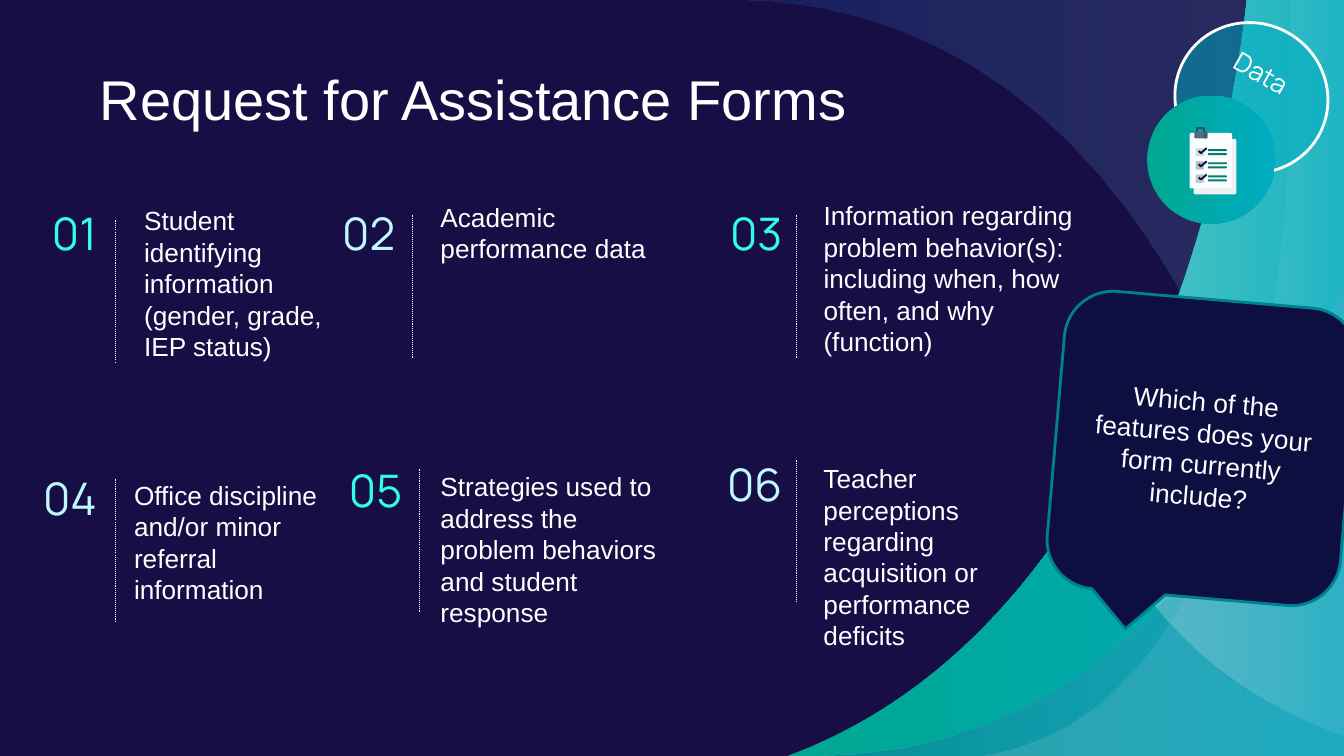
from lxml import etree
from pptx import Presentation
from pptx.dml.color import RGBColor
from pptx.enum.dml import MSO_LINE
from pptx.enum.shapes import MSO_CONNECTOR, MSO_SHAPE
from pptx.enum.text import MSO_ANCHOR, PP_ALIGN
from pptx.oxml.ns import qn
from pptx.util import Pt

DOT = MSO_LINE.ROUND_DOT
STRAIGHT = MSO_CONNECTOR.STRAIGHT
OVAL, ROUNDED = MSO_SHAPE.OVAL, MSO_SHAPE.ROUNDED_RECTANGLE
CALLOUT = MSO_SHAPE.ROUNDED_RECTANGULAR_CALLOUT
TOP, MIDDLE, BOTTOM = MSO_ANCHOR.TOP, MSO_ANCHOR.MIDDLE, MSO_ANCHOR.BOTTOM
LEFT, CENTER, RIGHT = PP_ALIGN.LEFT, PP_ALIGN.CENTER, PP_ALIGN.RIGHT

WIDTH, HEIGHT = 960, 540
EDGE = 1024.6  # right edge of the curved bands
NAVY, INK, WHITE = "160E44", "0D0F41", "FFFFFF"
TEAL, GREEN, MINT, ICE = "00ACC2", "00A791", "31FFE4", "C0F8FF"
STEEL, BLUE = "8AAFDC", "114CA0"
BODY_SIZE, INSET = 18.7, 9.36

# Outlines: a pair is a corner, six numbers are a Bezier curve.
# Fills run from left to right as (colour, opacity).
BANDS = [
    ([(947.5, 540), (947.5, 540, 894.2, 0, 520.6, 0), (965.5, 0), (965.5, 540)],
     [(BLUE, 29), (STEEL, 18)]),
    ([(EDGE, 0), (EDGE, 540), (562.3, 540), (851, 434.9, 909.4, 0, 909.4, 0)],
     [("12102F", 54)]),
    ([(562.3, 540), (EDGE, 540), (EDGE, 0), (890.6, 0),
      (890.6, 0, 873.4, 190.8, 777.6, 349.9),
      (728.6, 431.3, 659.5, 504.7, 562.3, 540)],
     [(GREEN, 100), (TEAL, 100)]),
    ([(777.6, 349.9), (846, 528.5, EDGE, 540, EDGE, 540), (EDGE, 0), (890.6, 0),
      (890.6, 0, 873.4, 190.8, 777.6, 349.9)],
     [(WHITE, 36), (WHITE, 0)]),
    ([(921.6, 0), (921.6, 0, 946.1, 503.3, 701.3, 540), (EDGE, 540), (EDGE, 0)],
     [(WHITE, 18), (WHITE, 0)]),
    ([(1006.6, 0), (1006.6, 0, 953.3, 540, 579.6, 540), (EDGE, 540), (EDGE, 0)],
     [(BLUE, 29), (STEEL, 18)]),
]

# number, colour, rule (x, top), number (right, top), text (left, bottom, width), wording
FEATURES = [
    ("01", MINT, (82.8, 157), (78.5, 137.5), (93.6, 267.8, 167.8),
     "Student identifying information (gender, grade, IEP status)"),
    ("02", ICE, (294.5, 153.4), (291.6, 137.5), (305.3, 198, 197.3),
     "Academic performance data"),
    ("03", MINT, (568.8, 153.4), (568.1, 137.5), (578.9, 264.2, 200.2),
     "Information regarding problem behavior(s): including when, how often, "
     "and why (function)"),
    ("04", ICE, (82.4, 342), (78.5, 326.9), (86.4, 441.4, 167.8),
     "Office discipline and/or minor referral information"),
    ("05", MINT, (299.5, 334.8), (296.6, 321.1), (305.3, 457.9, 182.9),
     "Strategies used to address the problem behaviors and student response"),
    ("06", ICE, (568.8, 328.3), (568.1, 316.8), (578.9, 474.4, 182.9),
     "Teacher perceptions regarding acquisition or performance deficits"),
]


def rgb(color):
    return RGBColor.from_string(color)


def set_opacity(parent, percent):
    for clr in parent.iter(qn("a:srgbClr")):
        etree.SubElement(clr, qn("a:alpha")).set("val", str(percent * 1000))


def paint(sp, stops, line=None, line_width=2):
    """Fill with one (colour, opacity) or a left-to-right gradient of two."""
    sp.shadow.inherit = False
    if not stops:
        sp.fill.background()
    elif len(stops) == 1:
        sp.fill.solid()
        sp.fill.fore_color.rgb = rgb(stops[0][0])
        set_opacity(sp._element.spPr.find(qn("a:solidFill")), stops[0][1])
    else:
        sp.fill.gradient()
        sp.fill.gradient_angle = 0
        for stop, (color, opacity) in zip(sp.fill.gradient_stops, stops):
            stop.color.rgb = rgb(color)
            set_opacity(stop._gs, opacity)
    if line:
        sp.line.color.rgb = rgb(line)
        sp.line.width = Pt(line_width)
    else:
        sp.line.fill.background()


def add_preset(s, kind, box, stops, line=None):
    sp = s.shapes.add_shape(kind, *map(Pt, box))
    paint(sp, stops, line)
    return sp


def add_outline(s, outline, close=True, steps=32):
    points = [outline[0]]
    for part in outline[1:]:
        if len(part) == 2:
            points.append(part)
            continue
        curve = [points[-1], part[:2], part[2:4], part[4:]]
        for i in range(1, steps + 1):
            t = i / steps
            weights = ((1 - t) ** 3, 3 * t * (1 - t) ** 2, 3 * t * t * (1 - t), t ** 3)
            points.append(tuple(sum(w * p[axis] for w, p in zip(weights, curve))
                                for axis in (0, 1)))
    points = [(Pt(x), Pt(y)) for x, y in points]
    builder = s.shapes.build_freeform(*points[0])
    builder.add_line_segments(points[1:], close=close)
    return builder.convert_to_shape()


def set_text(sp, text, size, color=WHITE, font="Arial", align=LEFT, anchor=TOP,
             inset=(INSET, INSET)):
    tf = sp.text_frame
    tf.word_wrap = True
    tf.vertical_anchor = anchor
    tf.margin_left = tf.margin_right = Pt(inset[0])
    tf.margin_top = tf.margin_bottom = Pt(inset[1])
    tf.text = text
    p = tf.paragraphs[0]
    p.alignment = align
    f = p.runs[0].font
    f.size, f.name, f.color.rgb = Pt(size), font, rgb(color)


def add_label(s, box, text, size, **style):
    sp = s.shapes.add_textbox(*map(Pt, box))
    set_text(sp, text, size, **style)
    return sp


def add_backdrop(s):
    s.background.fill.solid()
    s.background.fill.fore_color.rgb = rgb(NAVY)
    for outline, stops in BANDS:
        paint(add_outline(s, outline), stops)


def add_title(s, box, text):
    sp = s.shapes.title
    sp.left, sp.top, sp.width, sp.height = map(Pt, box)
    set_text(sp, text, 40, anchor=MIDDLE, inset=(7.2, 7.2))
    s.shapes._spTree.append(sp._element)  # in front of the backdrop


def add_clipboard(s, x, y):
    """Checklist icon, with its front sheet's top left corner at x, y."""
    for offset, color in ((3, "EEF1F4"), (0, "FBFCFD")):
        sheet = add_preset(s, ROUNDED, (x + offset, y + 1.4 * offset, 30.5, 39.6),
                           [(color, 100)])
        sheet.adjustments[0] = 0.04
    for row, box_color in enumerate(("D1DBE2", "B2C2CE", "BECBD5")):
        top = y + 10.8 + 9.4 * row
        add_preset(s, ROUNDED, (x + 4.3, top, 6, 6), [(box_color, 100)])
        for line_top in (top + 0.7, top + 3.6):
            bar = add_preset(s, ROUNDED, (x + 13, line_top, 13.7, 1.4), [("007D6D", 100)])
            bar.adjustments[0] = 0.5
        tick = [(x + 6.5, top + 2.1), (x + 8.1, top + 3.6), (x + 12.2, top)]
        paint(add_outline(s, tick, close=False), [], INK, 1.4)
    ring = [(x + 5.6, y), (x + 5.6, y - 3.6), (x + 10.3, y - 3.6), (x + 10.3, y)]
    paint(add_outline(s, ring, close=False), [], "344D65", 1.4)
    for left, width, color in ((3.4, 9.4, "546C81"), (10, 2.8, "435D74")):
        add_preset(s, ROUNDED, (x + left, y - 1, width, 4.8), [(color, 100)])


def add_data_badge(s, x, y):
    ring = add_preset(s, OVAL, (x + 19.4, y, 110.2, 106.6), [(TEAL, 50)], WHITE)
    label = add_label(s, (x + 22.3, y + 23.7, 96.5, 62), "Data", BODY_SIZE,
                      font="Manrope", align=CENTER, inset=(0, 0))
    label.text_frame.paragraphs[0].line_spacing = 0.9
    ring.rotation = label.rotation = 29.6
    add_preset(s, OVAL, (x, y + 51.8, 91.4, 91.4), [(GREEN, 100), (TEAL, 100)])
    add_clipboard(s, x + 30.3, y + 78.4)


def add_feature(s, number, color, rule, number_at, text_at, text):
    x, top = rule
    line = s.shapes.add_connector(STRAIGHT, Pt(x), Pt(top + 102), Pt(x), Pt(top))
    line.line.color.rgb = rgb(WHITE)
    line.line.width = Pt(0.75)
    line.line.dash_style = DOT
    etree.SubElement(line._element.spPr, qn("a:effectLst"))
    right, top = number_at
    add_label(s, (right - 68, top, 68, 55.4), number, 32, color=color,
              font="Manrope", align=RIGHT)
    left, bottom, width = text_at
    add_label(s, (left, bottom - 117, width, 117), text, BODY_SIZE, anchor=BOTTOM)


def add_question(s, box, text):
    sp = add_preset(s, CALLOUT, box, [(INK, 100)], "008192")
    sp.rotation = 4.9
    set_text(sp, text, BODY_SIZE, align=CENTER, anchor=MIDDLE, inset=(7.2, 3.6))


def main():
    prs = Presentation()
    prs.slide_width, prs.slide_height = Pt(WIDTH), Pt(HEIGHT)
    s = prs.slides.add_slide(prs.slide_layouts[5])
    add_backdrop(s)
    add_title(s, (64.1, 36.7, 738.7, 66.2), "Request for Assistance Forms")
    add_data_badge(s, 819.4, 16.6)
    for feature in FEATURES:
        add_feature(s, *feature)
    add_question(s, (753.8, 213.8, 210.2, 213.1),
                 "Which of the features does your form currently include?")
    prs.save("out.pptx")


if __name__ == "__main__":
    main()
